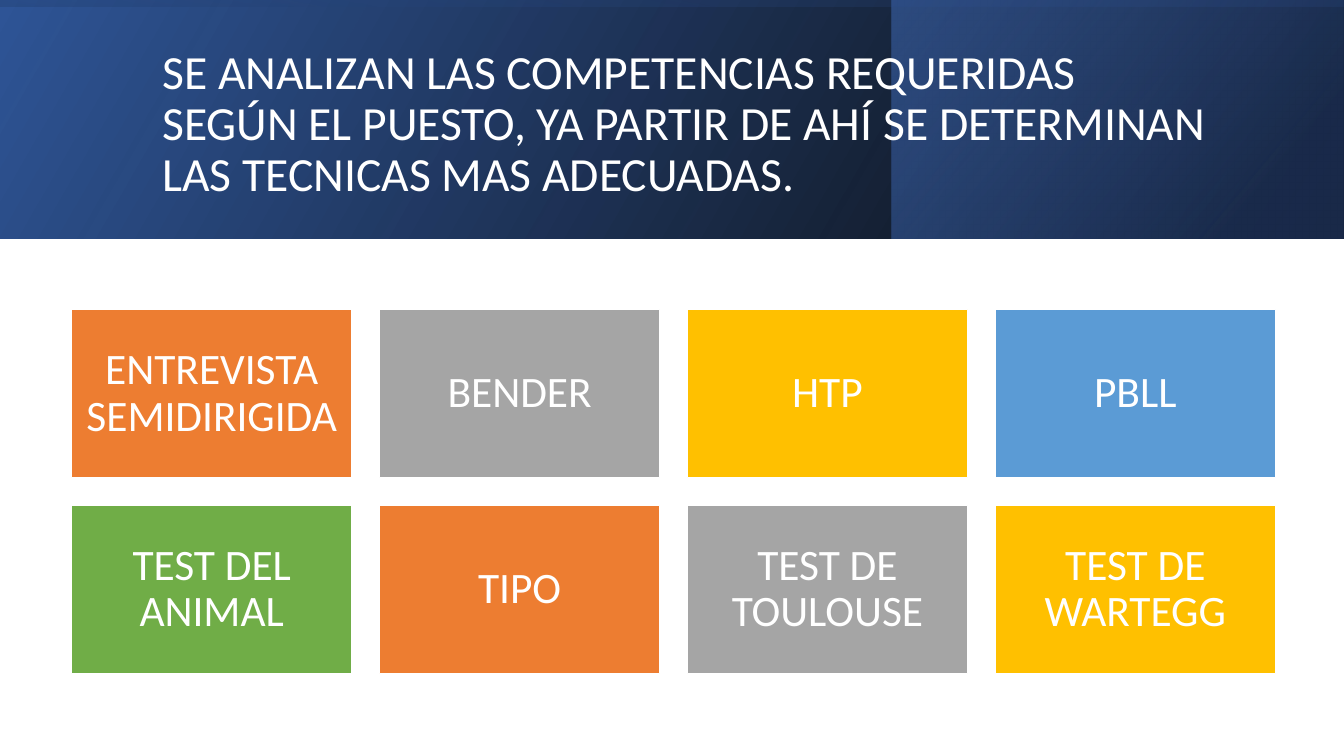
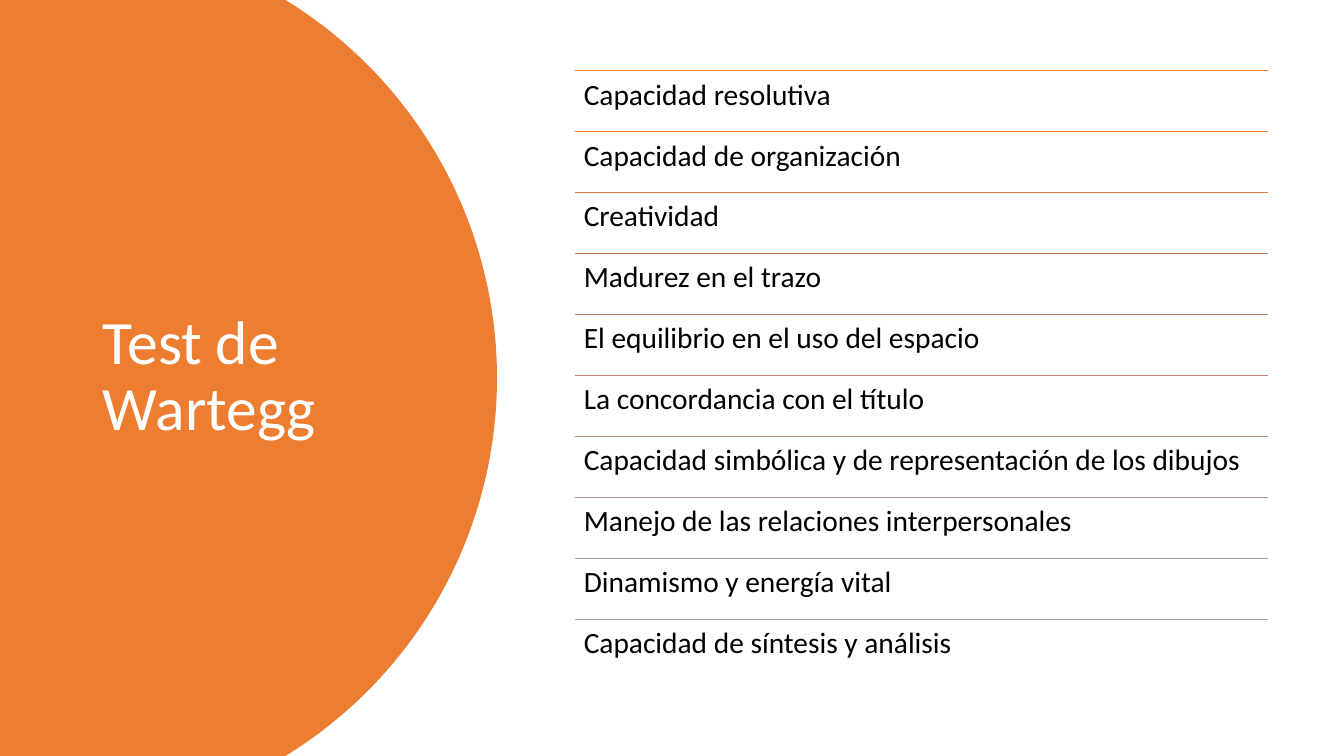
import math

from lxml import etree
from pptx import Presentation
from pptx.dml.color import RGBColor
from pptx.enum import shapes, text
from pptx.oxml import ns
from pptx.util import Inches, Pt

# Shared style
FONT = "Calibri"
WHITE = RGBColor(0xFF, 0xFF, 0xFF)
BLACK = RGBColor(0, 0, 0)
ORANGE = RGBColor(0xED, 0x7D, 0x31)
GRAY = RGBColor(0xA5, 0xA5, 0xA5)
GOLD = RGBColor(0xFF, 0xC0, 0x00)
SKY = RGBColor(0x5B, 0x9B, 0xD5)
GREEN = RGBColor(0x70, 0xAD, 0x47)
NAVY = RGBColor(0x20, 0x38, 0x64)
DEEP_BLUE = RGBColor(0x2F, 0x55, 0x97)
BLUE = RGBColor(0x44, 0x72, 0xC4)
WIDTH, HEIGHT = 13.33, 7.5

# Slide 1: header layers and technique cards
HEADER = ("SE ANALIZAN LAS COMPETENCIAS REQUERIDAS SEGÚN EL PUESTO, "
          "YA PARTIR DE AHÍ SE DETERMINAN LAS TECNICAS MAS ADECUADAS.")
# Each layer: place, rotation, gradient angle, stops (position %, colour, opacity %)
HEADER_LAYERS = [
    ((0, 0, WIDTH, 2.37), 0, 330, [(0, BLACK, 96), (100, DEEP_BLUE, 100)]),
    ((8.84, 0, 4.48, 2.37), 0, 320, [(19, NAVY, 68), (100, BLUE, 48)]),
    ((5.48, -5.48, 2.37, WIDTH), 270, 350, [(23, DEEP_BLUE, 16), (99, BLACK, 45)]),
]
TECHNIQUES = ["ENTREVISTA SEMIDIRIGIDA", "BENDER", "HTP", "PBLL",
              "TEST DEL ANIMAL", "TIPO", "TEST DE TOULOUSE", "TEST DE WARTEGG"]
CARD_COLORS = [ORANGE, GRAY, GOLD, SKY, GREEN]
COLUMNS = 4
CARD_LEFT, CARD_TOP, CARD_WIDTH, CARD_HEIGHT = 0.71, 3.07, 2.78, 1.67
CARD_GAP = (9.87 - CARD_LEFT) / (COLUMNS - 1) - CARD_WIDTH

# Slide 2: skills, each with the colour of the rule above it
SKILLS = [
    ("Capacidad resolutiva", ORANGE),
    ("Capacidad de organización", RGBColor(0xE3, 0x7A, 0x40)),
    ("Creatividad", RGBColor(0xDA, 0x7A, 0x4E)),
    ("Madurez en el trazo", RGBColor(0xD1, 0x7B, 0x5C)),
    ("El equilibrio en el uso del espacio", RGBColor(0xC8, 0x7F, 0x69)),
    ("La concordancia con el título", RGBColor(0xC0, 0x83, 0x76)),
    ("Capacidad simbólica y de representación de los dibujos",
     RGBColor(0xB9, 0x8A, 0x82)),
    ("Manejo de las relaciones interpersonales", RGBColor(0xB2, 0x92, 0x8E)),
    ("Dinamismo y energía vital", RGBColor(0xAB, 0x9B, 0x9A)),
    ("Capacidad de síntesis y análisis", GRAY),
]
LIST_LEFT, LIST_TOP, LIST_WIDTH, LIST_HEIGHT = 5.7, 0.7, 6.88, 6.05
DISC_RADIUS, DISC_RIGHT, ARC_STEPS = 4.4, 4.93, 80


def inches(values):
    return [Inches(value) for value in values]


def write(box, words, size, color, anchor, align=text.PP_ALIGN.LEFT, inset=None):
    frame = box.text_frame
    frame.word_wrap = True
    frame.auto_size = text.MSO_AUTO_SIZE.NONE
    frame.vertical_anchor = anchor
    if inset is not None:
        frame.margin_left = frame.margin_right = Inches(inset)
        frame.margin_top = frame.margin_bottom = Inches(inset)
    frame.text = words
    para = frame.paragraphs[0]
    para.alignment = align
    para.line_spacing = 0.9
    para.font.name = FONT
    para.font.size = Pt(size)
    para.font.color.rgb = color


def add_title(page, words, place, size):
    title = page.shapes.title
    title.left, title.top, title.width, title.height = inches(place)
    write(title, words, size, WHITE, text.MSO_ANCHOR.MIDDLE)
    # Bring the title in front of the background shapes
    page.shapes._spTree.append(title._element)


def add_rectangle(page, place):
    box = page.shapes.add_shape(shapes.MSO_SHAPE.RECTANGLE, *inches(place))
    box.shadow.inherit = False
    return box


def add_gradient_layer(page, place, rotation, angle, stops):
    layer = add_rectangle(page, place)
    layer.rotation = rotation
    layer.line.fill.background()
    layer._element.spPr.xfrm.set("flipH", "1")
    layer.fill.gradient()
    layer.fill.gradient_angle = 360 - angle
    for stop, (position, color, _) in zip(layer.fill.gradient_stops, stops):
        stop.position = position / 100
        stop.color.rgb = color
    colors = layer._element.spPr.iter(ns.qn("a:srgbClr"))
    for node, (_, _, opacity) in zip(list(colors), stops):
        etree.SubElement(node, ns.qn("a:alpha"), val=str(opacity * 1000))


def add_disc(page):
    center = DISC_RIGHT - DISC_RADIUS
    reach = math.asin(HEIGHT / 2 / DISC_RADIUS)
    angles = [reach * (2 * step / ARC_STEPS - 1) for step in range(ARC_STEPS + 1)]
    arc = [(Inches(center + DISC_RADIUS * math.cos(angle)),
            Inches(HEIGHT / 2 + DISC_RADIUS * math.sin(angle))) for angle in angles]
    builder = page.shapes.build_freeform(0, 0)
    builder.add_line_segments(arc + [(0, Inches(HEIGHT))], close=True)
    disc = builder.convert_to_shape()
    disc.shadow.inherit = False
    disc.fill.solid()
    disc.fill.fore_color.rgb = ORANGE
    disc.line.fill.background()


def add_rule(page, left, top, width, color):
    rule = page.shapes.add_connector(
        shapes.MSO_CONNECTOR.STRAIGHT, *inches((left, top, left + width, top)))
    rule.line.color.rgb = color
    rule.line.width = Pt(1)
    etree.SubElement(rule._element.spPr, ns.qn("a:effectLst"))


def build_techniques(page):
    for layer in HEADER_LAYERS:
        add_gradient_layer(page, *layer)
    add_title(page, HEADER, (1.51, 0.38, 10.63, 1.72), 34)
    for index, technique in enumerate(TECHNIQUES):
        row, column = divmod(index, COLUMNS)
        card = add_rectangle(page, (CARD_LEFT + column * (CARD_WIDTH + CARD_GAP),
                                    CARD_TOP + row * (CARD_HEIGHT + CARD_GAP),
                                    CARD_WIDTH, CARD_HEIGHT))
        card.fill.solid()
        card.fill.fore_color.rgb = CARD_COLORS[index % len(CARD_COLORS)]
        card.line.color.rgb = WHITE
        card.line.width = Pt(1)
        write(card, technique, 31, WHITE, text.MSO_ANCHOR.MIDDLE,
              text.PP_ALIGN.CENTER, 0.13)


def build_skills(page):
    add_disc(page)
    add_title(page, "Test de Wartegg", (0.92, 0.7, 3.23, 6.09), 44)
    row_height = LIST_HEIGHT / len(SKILLS)
    for index, (skill, color) in enumerate(SKILLS):
        top = LIST_TOP + index * row_height
        add_rule(page, LIST_LEFT, top, LIST_WIDTH, color)
        box = page.shapes.add_textbox(*inches((LIST_LEFT, top, LIST_WIDTH, row_height)))
        write(box, skill, 21, BLACK, text.MSO_ANCHOR.TOP, inset=0.09)


def main():
    deck = Presentation()
    deck.slide_width, deck.slide_height = inches((WIDTH, HEIGHT))
    title_only = deck.slide_layouts[5]
    for build in (build_techniques, build_skills):
        build(deck.slides.add_slide(title_only))
    deck.save("out.pptx")


if __name__ == "__main__":
    main()
